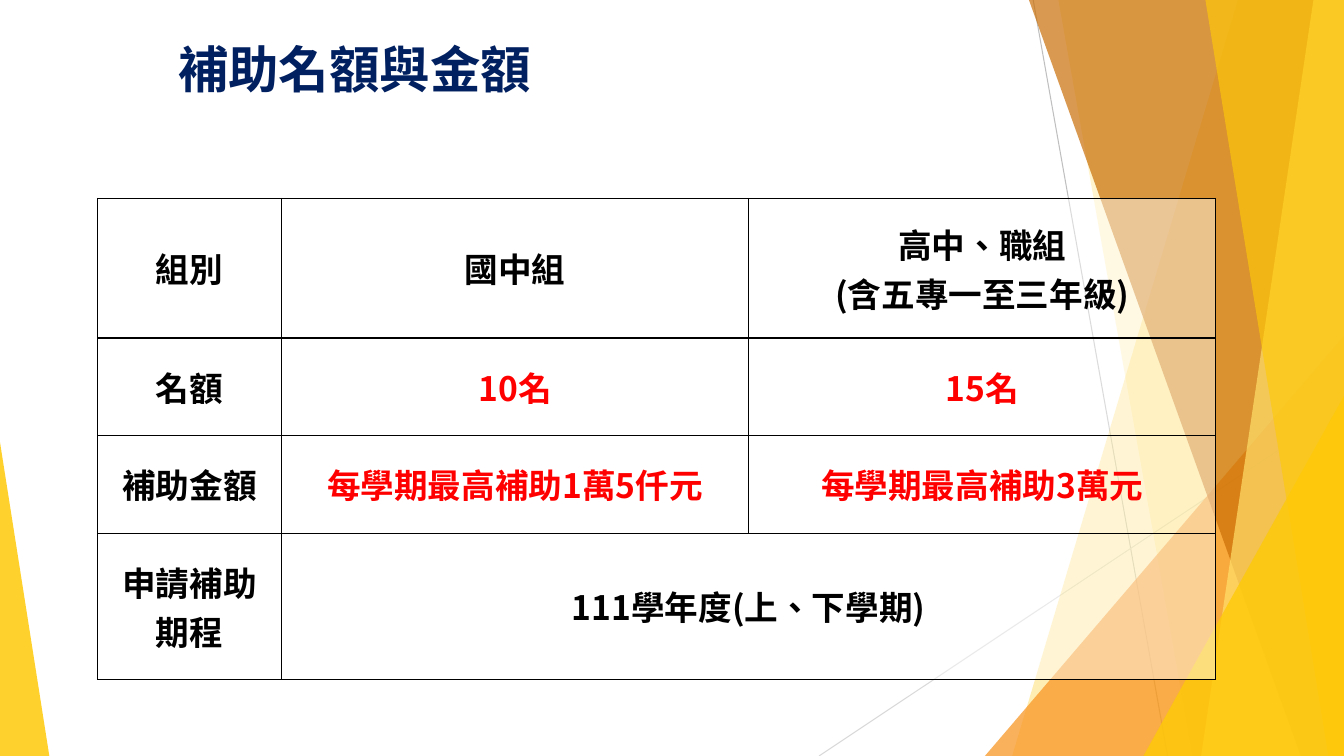
from dataclasses import dataclass

from pptx import Presentation
from pptx.dml.color import RGBColor
from pptx.dml.fill import FillFormat
from pptx.enum.lang import MSO_LANGUAGE_ID as Language
from pptx.enum.shapes import MSO_CONNECTOR as Connector, MSO_SHAPE as Preset
from pptx.enum.text import MSO_ANCHOR as Anchor, PP_ALIGN as Align
from pptx.oxml.ns import qn
from pptx.oxml.xmlchemy import BaseOxmlElement
from pptx.shapes.shapetree import SlideShapes
from pptx.table import _Cell as Cell
from pptx.text.text import _Paragraph as Paragraph
from pptx.util import Emu, Pt
from lxml.etree import SubElement

PX = 9525
WIDTH, HEIGHT = 1280, 720
FONT = "Noto Sans CJK SC"
COLORS = {
    "grey": "BFBFBF", "pale grey": "D9D9D9", "gold": "FFCA08", "light gold": "FFDF6B",
    "orange": "F8931D", "brown": "CA6F06", "navy": "002060", "red": "FF0000",
    "black": "000000", "white": "FFFFFF",
}


@dataclass
class Ray:
    start: tuple[int, int]
    end: tuple[int, int]
    color: str


@dataclass
class Band:
    """Full-height facet from a slanted left edge to the right slide edge."""
    top_left: int
    bottom_left: int
    color: str
    opacity: int


@dataclass
class Wedge:
    """Triangle standing on the bottom slide edge; apex 0 is left, 1 is right."""
    left: int
    top: int
    width: int
    apex: int
    color: str
    opacity: int


@dataclass
class Entry:
    row: int
    column: int
    lines: tuple[str, ...]
    color: str = "black"


RAYS = [
    Ray((984, 0), (1112, HEIGHT), "grey"),
    Ray((WIDTH, 387), (780, HEIGHT), "pale grey"),
]
FACETS = [
    Band(1179, 964, "gold", 30),
    Band(1008, 1136, "gold", 20),
    Wedge(938, 320, 342, 1, "orange", 72),
    Band(980, 1239, "brown", 70),
    Band(1251, 1144, "light gold", 70),
    Band(1148, 1265, "gold", 65),
    Wedge(1089, 377, 191, 1, "gold", 80),
    Wedge(0, 421, 47, 0, "gold", 85),
]
COLUMN_WIDTHS = (175, 445, 445)
ROW_HEIGHTS = (115, 93, 93, 139)
ENTRIES = [
    Entry(0, 0, ("組別",)),
    Entry(0, 1, ("國中組",)),
    Entry(0, 2, ("高中、職組", "(含五專一至三年級)")),
    Entry(1, 0, ("名額",)),
    Entry(1, 1, ("10名",), "red"),
    Entry(1, 2, ("15名",), "red"),
    Entry(2, 0, ("補助金額",)),
    Entry(2, 1, ("每學期最高補助1萬5仟元",), "red"),
    Entry(2, 2, ("每學期最高補助3萬元",), "red"),
    Entry(3, 0, ("申請補助", "期程")),
    Entry(3, 1, ("111學年度(上、下學期)",)),
]


def px(length: int) -> Emu:
    return Emu(length * PX)


def rgb(color: str) -> RGBColor:
    return RGBColor.from_string(COLORS[color])


def fill_translucent(fill: FillFormat, owner: BaseOxmlElement, color: str, opacity: int) -> None:
    """Fill solidly; owner is the XML element that holds the fill."""
    fill.solid()
    fill.fore_color.rgb = rgb(color)
    tint = owner.find(qn("a:solidFill")).find(qn("a:srgbClr"))
    SubElement(tint, qn("a:alpha"), val=str(opacity * 1000))


def add_span(para: Paragraph, text: str, size: int, color: str) -> None:
    span = para.add_run()
    span.text = text
    font = span.font
    font.size, font.bold, font.name = Pt(size), True, FONT
    font.color.rgb = rgb(color)
    font.language_id = Language.TRADITIONAL_CHINESE
    SubElement(font._element, qn("a:ea"), typeface=FONT)


def draw_ray(shapes: SlideShapes, ray: Ray) -> None:
    line = shapes.add_connector(Connector.STRAIGHT, *map(px, ray.start + ray.end))
    line.line.color.rgb = rgb(ray.color)
    line.line.width = Pt(0.75)
    SubElement(line._element.spPr, qn("a:effectLst"))


def draw_facet(shapes: SlideShapes, facet: Band | Wedge) -> None:
    if isinstance(facet, Band):
        outline = shapes.build_freeform(facet.top_left, 0, scale=PX)
        outline.add_line_segments([(WIDTH, 0), (WIDTH, HEIGHT), (facet.bottom_left, HEIGHT)])
        shape = outline.convert_to_shape()
    else:
        shape = shapes.add_shape(Preset.ISOSCELES_TRIANGLE, px(facet.left), px(facet.top),
                                 px(facet.width), px(HEIGHT - facet.top))
        shape.adjustments[0] = facet.apex
    fill_translucent(shape.fill, shape._element.spPr, facet.color, facet.opacity)
    shape.line.fill.background()
    shape.shadow.inherit = False


def format_cell(cell: Cell) -> None:
    cell.vertical_anchor = Anchor.MIDDLE
    cell.margin_left = cell.margin_right = cell.margin_top = cell.margin_bottom = px(20)
    properties = cell._tc.get_or_add_tcPr()
    for side in ("lnL", "lnR", "lnT", "lnB"):
        border = SubElement(properties, qn(f"a:{side}"), w=str(Pt(1)))
        paint = SubElement(border, qn("a:solidFill"))
        SubElement(paint, qn("a:srgbClr"), val=COLORS["black"])
    fill_translucent(cell.fill, properties, "white", 45)


def draw_table(shapes: SlideShapes) -> None:
    frame = shapes.add_table(len(ROW_HEIGHTS), len(COLUMN_WIDTHS), px(93), px(189),
                             px(sum(COLUMN_WIDTHS)), px(sum(ROW_HEIGHTS)))
    table = frame.table
    table.first_row = table.horz_banding = False
    for column, width in zip(table.columns, COLUMN_WIDTHS):
        column.width = px(width)
    for row, height in zip(table.rows, ROW_HEIGHTS):
        row.height = px(height)
    for cell in table.iter_cells():
        format_cell(cell)
    table.cell(3, 1).merge(table.cell(3, 2))
    for entry in ENTRIES:
        box = table.cell(entry.row, entry.column).text_frame
        for index, text in enumerate(entry.lines):
            para = box.add_paragraph() if index else box.paragraphs[0]
            para.alignment = Align.CENTER
            add_span(para, text, 24, entry.color)


def main() -> None:
    deck = Presentation()
    deck.slide_width, deck.slide_height = px(WIDTH), px(HEIGHT)
    page = deck.slides.add_slide(deck.slide_layouts[5])
    shapes = page.shapes
    for ray in RAYS:
        draw_ray(shapes, ray)
    for facet in FACETS:
        draw_facet(shapes, facet)

    title = shapes.title
    shapes._spTree.append(title._element)
    title.left, title.top, title.width, title.height = map(px, (160, 38, 997, 139))
    title.text_frame.vertical_anchor = Anchor.TOP
    para = title.text_frame.paragraphs[0]
    para.alignment = Align.LEFT
    para.line_spacing = 0.9
    add_span(para, "補助名額與金額", 36, "navy")

    draw_table(shapes)
    deck.save("out.pptx")


if __name__ == "__main__":
    main()
